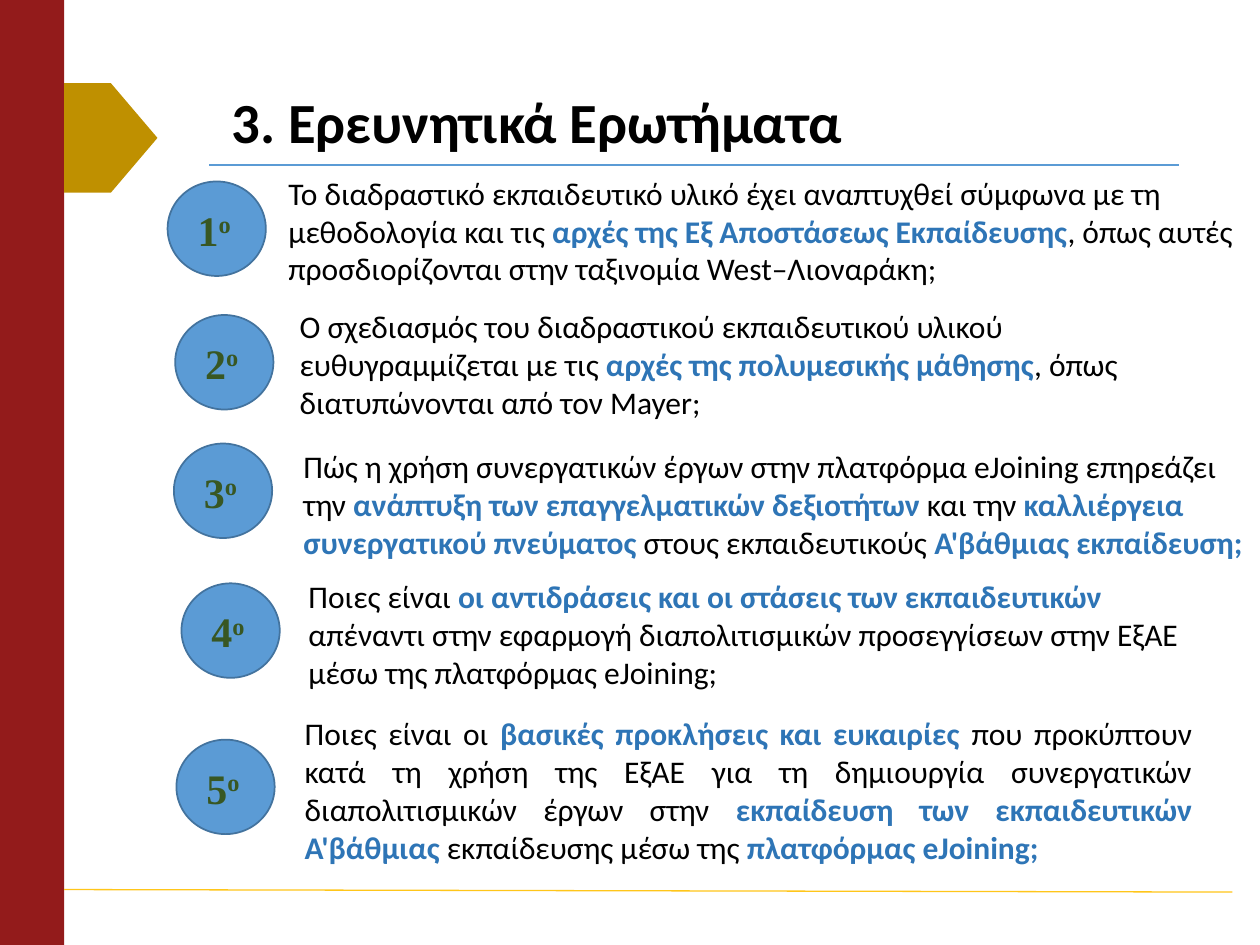
import pptx
import pptx.util
import pptx.dml.color
import pptx.enum.shapes
import pptx.enum.text
from lxml import etree

Inches = pptx.util.Inches
SHAPE = pptx.enum.shapes.MSO_SHAPE
ALIGN = pptx.enum.text.PP_ALIGN
ANCHOR = pptx.enum.text.MSO_ANCHOR

BLUE = "5B9BD5"

# Circle position, text box, alignment, and text with the key parts between asterisks
ITEMS = [
    ((1.33, 1.44), (2.19, 1.33, 7.8, 1.31), ALIGN.LEFT,
     "Το διαδραστικό εκπαιδευτικό υλικό έχει αναπτυχθεί σύμφωνα με τη μεθοδολογία και τις "
     "*αρχές της Εξ Αποστάσεως Εκπαίδευσης*, όπως αυτές προσδιορίζονται στην ταξινομία "
     "West–Λιοναράκη;"),
    ((1.39, 2.5), (2.28, 2.39, 7.34, 1.01), ALIGN.LEFT,
     "Ο σχεδιασμός του διαδραστικού εκπαιδευτικού υλικού ευθυγραμμίζεται με τις "
     "*αρχές της πολυμεσικής μάθησης*, όπως διατυπώνονται από τον Mayer;"),
    ((1.38, 3.52), (2.31, 3.5, 7.69, 1.01), ALIGN.LEFT,
     "Πώς η χρήση συνεργατικών έργων στην πλατφόρμα eJoining επηρεάζει την "
     "*ανάπτυξη των επαγγελματικών δεξιοτήτων *και την *καλλιέργεια συνεργατικού πνεύματος* "
     "στους εκπαιδευτικούς *Α'βάθμιας εκπαίδευση;*"),
    ((1.44, 4.63), (2.35, 4.53, 7.37, 1.01), ALIGN.LEFT,
     "Ποιες είναι *οι αντιδράσεις και οι στάσεις των εκπαιδευτικών *απέναντι στην εφαρμογή "
     "διαπολιτισμικών προσεγγίσεων στην ΕξΑΕ μέσω της πλατφόρμας eJoining;"),
    ((1.4, 5.87), (2.32, 5.62, 7.24, 1.31), ALIGN.JUSTIFY,
     "Ποιες είναι οι *βασικές προκλήσεις και ευκαιρίες *που προκύπτουν κατά τη χρήση της ΕξΑΕ "
     "για τη δημιουργία συνεργατικών διαπολιτισμικών έργων στην *εκπαίδευση των εκπαιδευτικών "
     "Α'βάθμιας *εκπαίδευσης μέσω της *πλατφόρμας eJoining;*"),
]


def color(code):
    return pptx.dml.color.RGBColor.from_string(code)


def add_run(para, text, size=18, font="Calibri", fill="000000", bold=False, raised=False):
    run = para.add_run()
    run.text = text
    run.font.size = pptx.util.Pt(size)
    run.font.name = font
    run.font.bold = bold
    run.font.color.rgb = color(fill)
    if raised:
        run.font._element.set("baseline", "30000")


def add_box(slide, box, align=ALIGN.LEFT, anchor=ANCHOR.TOP):
    frame = slide.shapes.add_textbox(*map(Inches, box)).text_frame
    frame.word_wrap = True
    frame.vertical_anchor = anchor
    para = frame.paragraphs[0]
    para.alignment = align
    return para


def add_form(slide, kind, box, fill, edge=None):
    form = slide.shapes.add_shape(kind, *map(Inches, box))
    form.shadow.inherit = False
    form.fill.solid()
    form.fill.fore_color.rgb = color(fill)
    if edge:
        form.line.color.rgb = color(edge)
        form.line.width = pptx.util.Pt(1)
    else:
        form.line.fill.background()
    return form


def add_rule(slide, ends, fill):
    kind = pptx.enum.shapes.MSO_CONNECTOR.STRAIGHT
    rule = slide.shapes.add_connector(kind, *map(Inches, ends))
    rule.line.color.rgb = color(fill)
    rule.line.width = pptx.util.Pt(0.75)
    etree.SubElement(rule._element.spPr, pptx.oxml.ns.qn("a:effectLst"))


def add_badge(slide, spot, num):
    left, top = spot
    add_form(slide, SHAPE.OVAL, (left, top, 0.78, 0.75), BLUE, "43739E")
    para = add_box(slide, (left + 0.14, top + 0.13, 0.62, 0.51))
    style = dict(size=24, font="Times New Roman", fill="385723", bold=True)
    add_run(para, str(num), **style)
    add_run(para, "ο", raised=True, **style)


def add_item(slide, box, align, text):
    para = add_box(slide, box, align)
    for i, part in enumerate(text.split("*")):
        key = i % 2 == 1
        if part:
            add_run(para, part, fill="2E75B6" if key else "000000", bold=key)


def main():
    deck = pptx.Presentation()
    deck.slide_width, deck.slide_height = Inches(10), Inches(7.5)
    slide = deck.slides.add_slide(deck.slide_layouts[6])

    # Side band, rules and tag
    add_form(slide, SHAPE.RECTANGLE, (0, 0, 0.51, 7.5), "931B1B")
    add_rule(slide, (1.66, 1.31, 9.36, 1.31), BLUE)
    add_rule(slide, (0.51, 7.06, 9.78, 7.08), "FFC61A")
    add_form(slide, SHAPE.PENTAGON, (0.51, 0.66, 0.74, 0.87), "BF9000")

    # Title
    title = add_box(slide, (1.74, 0.68, 7.9, 0.63), anchor=ANCHOR.MIDDLE)
    title.line_spacing = 0.9
    add_run(title, "3. Ερευνητικά Ερωτήματα", size=32.4, bold=True)

    # Numbered questions
    for num, (spot, box, align, text) in enumerate(ITEMS, 1):
        add_badge(slide, spot, num)
        add_item(slide, box, align, text)

    deck.save("out.pptx")


if __name__ == "__main__":
    main()
